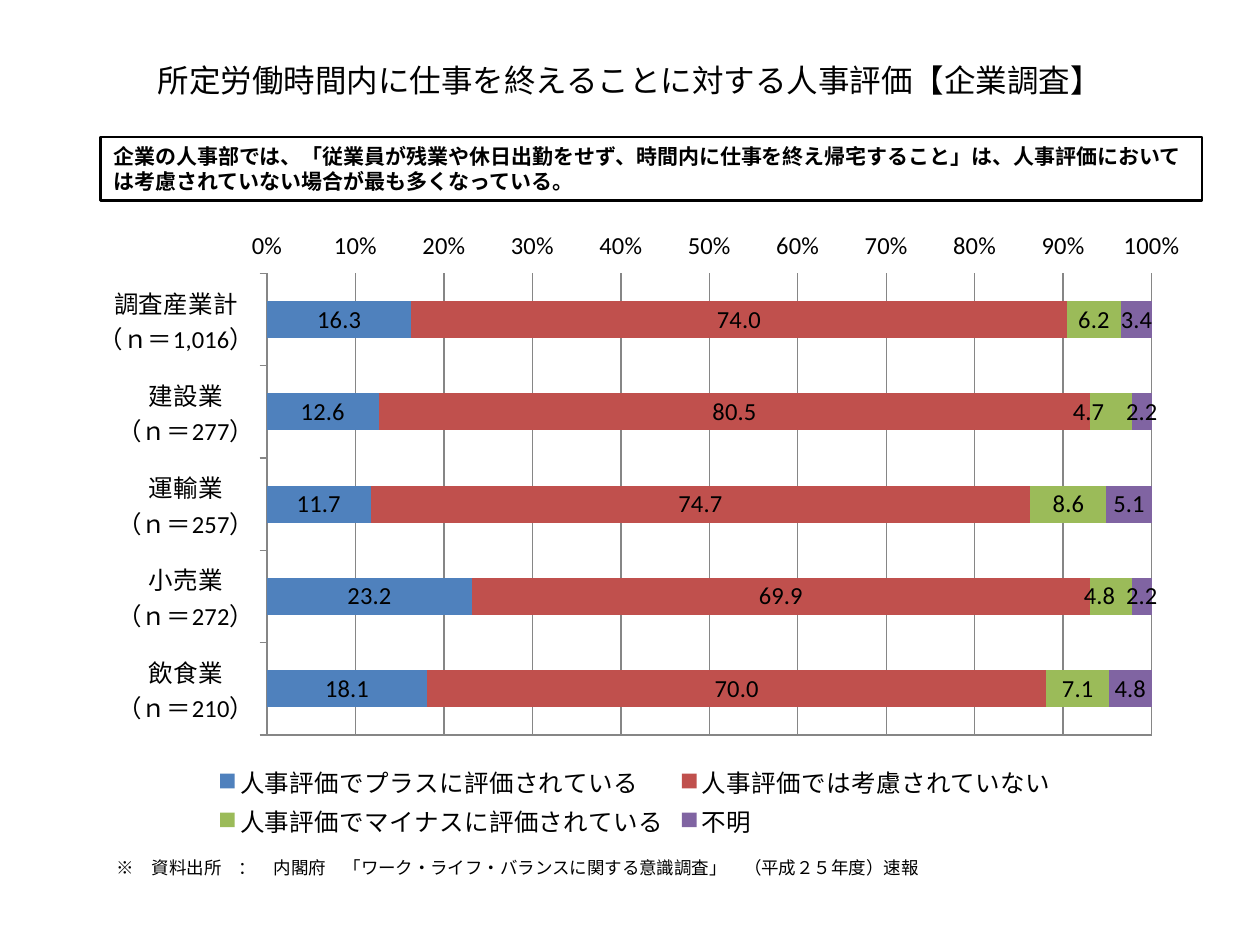
"""Build a slide on how personnel reviews treat finishing work on time."""
import dataclasses
import typing

import lxml.etree
import pptx
import pptx.chart.data
import pptx.dml.color
import pptx.enum.chart
import pptx.enum.shapes
import pptx.enum.text
import pptx.oxml.ns
import pptx.util

WIDTH, HEIGHT = pptx.util.Inches(10), pptx.util.Inches(7.5)
BLACK, GRAY = "000000", "868686"
LATIN, JAPANESE = "Calibri", "Noto Sans CJK JP"


class Box(typing.NamedTuple):
    """A frame given as shares of its container."""
    left: float
    top: float
    width: float
    height: float


@dataclasses.dataclass
class Answer:
    """One answer with its share in each industry."""
    name: str
    color: str
    values: tuple[float, ...]
    label_shifts: dict[int, float] = dataclasses.field(default_factory=dict)


INDUSTRIES = ("飲食業\n（ｎ＝210）", "小売業\n（ｎ＝272）", "運輸業\n（ｎ＝257）",
              "建設業\n（ｎ＝277）", "調査産業計\n（ｎ＝1,016）")
ANSWERS = (
    Answer("人事評価でプラスに評価されている", "4F81BD", (18.1, 23.2, 11.7, 12.6, 16.3)),
    Answer("人事評価では考慮されていない", "C0504D", (70.0, 69.9, 74.7, 80.5, 74.0)),
    Answer("人事評価でマイナスに評価されている", "9BBB59", (7.1, 4.8, 8.6, 4.7, 6.2),
           {1: -0.01, 3: -0.02}),
    Answer("不明", "8064A2", (4.8, 2.2, 5.1, 2.2, 3.4)),
)


def rgb(color: str) -> pptx.dml.color.RGBColor:
    """Turn a hex string into a colour."""
    return pptx.dml.color.RGBColor.from_string(color)


def frame(box: Box) -> tuple[int, ...]:
    """Turn shares of the slide into lengths."""
    return (round(box.left * WIDTH), round(box.top * HEIGHT),
            round(box.width * WIDTH), round(box.height * HEIGHT))


def style_font(font, size: float, name: str = LATIN, bold: bool = False) -> None:
    """Set the size, typeface and weight of black text."""
    font.size, font.name, font.bold = pptx.util.Pt(size), name, bold
    font.color.rgb = rgb(BLACK)


def write(shape, text: str, size: float, align, anchor,
          name: str = LATIN, bold: bool = False) -> None:
    """Write one paragraph into a shape."""
    text_frame = shape.text_frame
    text_frame.word_wrap = True
    text_frame.vertical_anchor = anchor
    paragraph = text_frame.paragraphs[0]
    paragraph.alignment = align
    run = paragraph.add_run()
    run.text = text
    style_font(run.font, size, name, bold)


def set_layout(parent, position: int, box: dict[str, object]) -> None:
    """Give a chart part a manual layout."""
    tag = pptx.oxml.ns.qn
    for old in parent.findall(tag("c:layout")):
        parent.remove(old)
    layout = lxml.etree.Element(tag("c:layout"))
    manual = lxml.etree.SubElement(layout, tag("c:manualLayout"))
    for key, value in box.items():
        lxml.etree.SubElement(manual, tag(f"c:{key}")).set("val", str(value))
    parent.insert(position, layout)


def edge_layout(box: Box) -> dict[str, object]:
    """Describe a box measured from the chart's corner."""
    return {"xMode": "edge", "yMode": "edge",
            "x": box.left, "y": box.top, "w": box.width, "h": box.height}


def style_series(series, answer: Answer) -> None:
    """Colour one series and label its bars."""
    series.format.fill.solid()
    series.format.fill.fore_color.rgb = rgb(answer.color)
    labels = series.data_labels
    labels.show_value = True
    labels.number_format, labels.number_format_is_linked = "0.0", False
    style_font(labels.font, 14)
    for index, shift in answer.label_shifts.items():
        label = series.points[index].data_label
        label.position = pptx.enum.chart.XL_LABEL_POSITION.CENTER
        style_font(label.font, 14)
        element = series._element.xpath(f'c:dLbls/c:dLbl[c:idx/@val="{index}"]')[0]
        set_layout(element, 1, {"x": shift, "y": 0})


def style_axes(chart) -> None:
    """Format both axes and the grid."""
    marks = pptx.enum.chart.XL_TICK_MARK
    values, categories = chart.value_axis, chart.category_axis
    for axis, mark in ((values, marks.INSIDE), (categories, marks.OUTSIDE)):
        axis.major_tick_mark, axis.minor_tick_mark = mark, marks.NONE
        axis.format.line.color.rgb = rgb(GRAY)
        style_font(axis.tick_labels.font, 14)
    values.minimum_scale, values.maximum_scale, values.major_unit = 0, 1, 0.1
    values.tick_label_position = pptx.enum.chart.XL_TICK_LABEL_POSITION.HIGH
    values.tick_labels.number_format = "0%"
    values.tick_labels.number_format_is_linked = False
    values.has_major_gridlines = True
    values.major_gridlines.format.line.color.rgb = rgb(GRAY)


def add_answer_chart(slide, box: Box) -> None:
    """Add the stacked bars with their legend."""
    data = pptx.chart.data.CategoryChartData(number_format="0.0")
    data.categories = INDUSTRIES
    for answer in ANSWERS:
        data.add_series(answer.name, answer.values)
    chart = slide.shapes.add_chart(
        pptx.enum.chart.XL_CHART_TYPE.BAR_STACKED_100, *frame(box), data).chart
    style_font(chart.font, 14)
    chart.has_title = False
    plot = chart.plots[0]
    plot.gap_width, plot.overlap, plot.vary_by_categories = 150, 100, False
    for series, answer in zip(plot.series, ANSWERS):
        style_series(series, answer)
    style_axes(chart)
    chart.has_legend = True
    legend = chart.legend
    legend.position = pptx.enum.chart.XL_LEGEND_POSITION.BOTTOM
    legend.include_in_layout = False
    style_font(legend.font, 14)
    set_layout(legend._element, 1, edge_layout(Box(0.13, 0.87, 0.75, 0.13)))
    plot_area = chart._chartSpace.chart.plotArea
    set_layout(plot_area, 0, {"layoutTarget": "inner",
                              **edge_layout(Box(0.18, 0.09, 0.78, 0.74))})


def main() -> None:
    """Build and save the slide."""
    align, anchor = pptx.enum.text.PP_ALIGN, pptx.enum.text.MSO_ANCHOR
    presentation = pptx.Presentation()
    presentation.slide_width, presentation.slide_height = WIDTH, HEIGHT
    slide = presentation.slides.add_slide(presentation.slide_layouts[5])

    title = slide.shapes.title
    title.left, title.top, title.width, title.height = frame(Box(0.05, 0.04, 0.9, 0.09))
    write(title, "所定労働時間内に仕事を終えることに対する人事評価【企業調査】",
          18, align.CENTER, anchor.MIDDLE)

    add_answer_chart(slide, Box(0.05, 0.23, 0.9, 0.66))

    source = slide.shapes.add_textbox(*frame(Box(0.083, 0.9, 0.89, 0.036)))
    write(source, "※　資料出所　：　内閣府　「ワーク・ライフ・バランスに関する意識調査」　（平成２５年度）速報",
          10, align.LEFT, anchor.TOP, JAPANESE)

    summary = slide.shapes.add_shape(pptx.enum.shapes.MSO_SHAPE.RECTANGLE,
                                     *frame(Box(0.08, 0.145, 0.874, 0.067)))
    summary.shadow.inherit = False
    summary.fill.background()
    summary.line.color.rgb = rgb(BLACK)
    summary.line.width = pptx.util.Pt(1.5)
    write(summary, "企業の人事部では、「従業員が残業や休日出勤をせず、時間内に仕事を終え帰宅すること」は、"
          "人事評価においては考慮されていない場合が最も多くなっている。",
          12, align.LEFT, anchor.TOP, bold=True)

    presentation.save("out.pptx")


if __name__ == "__main__":
    main()
